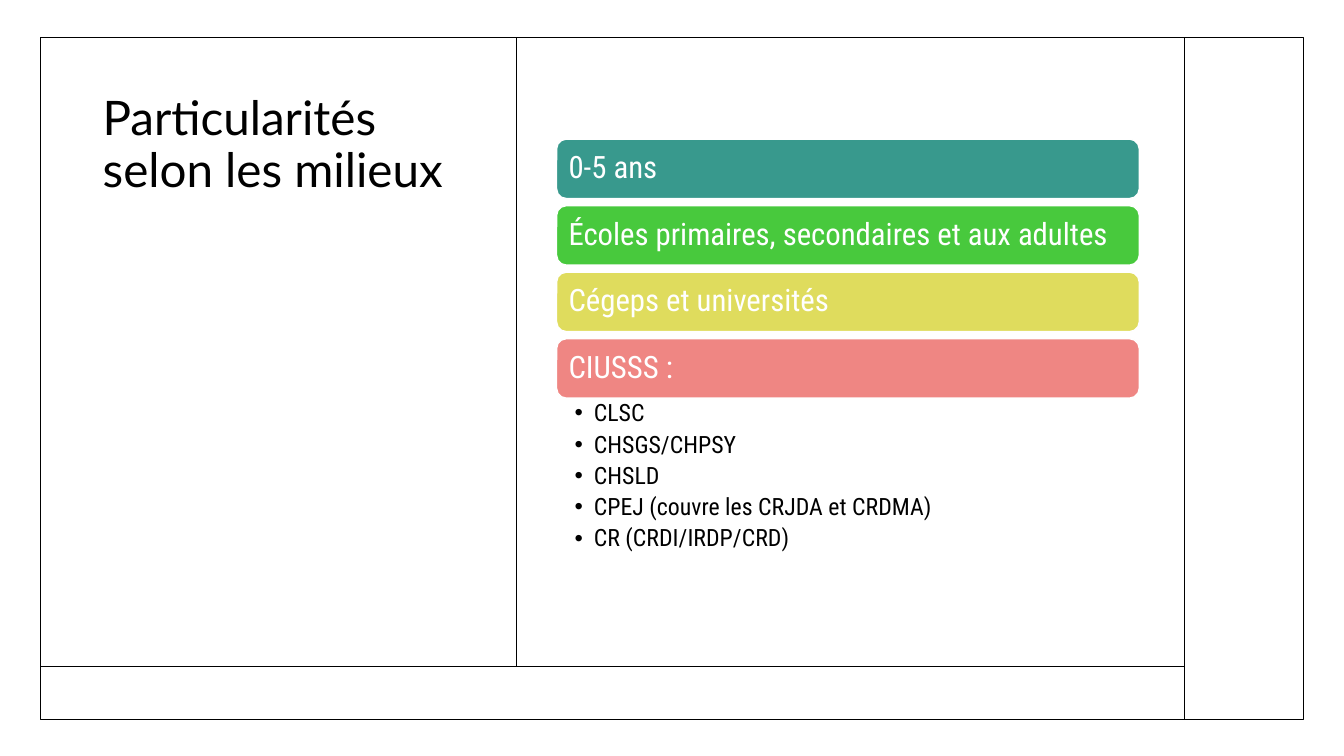
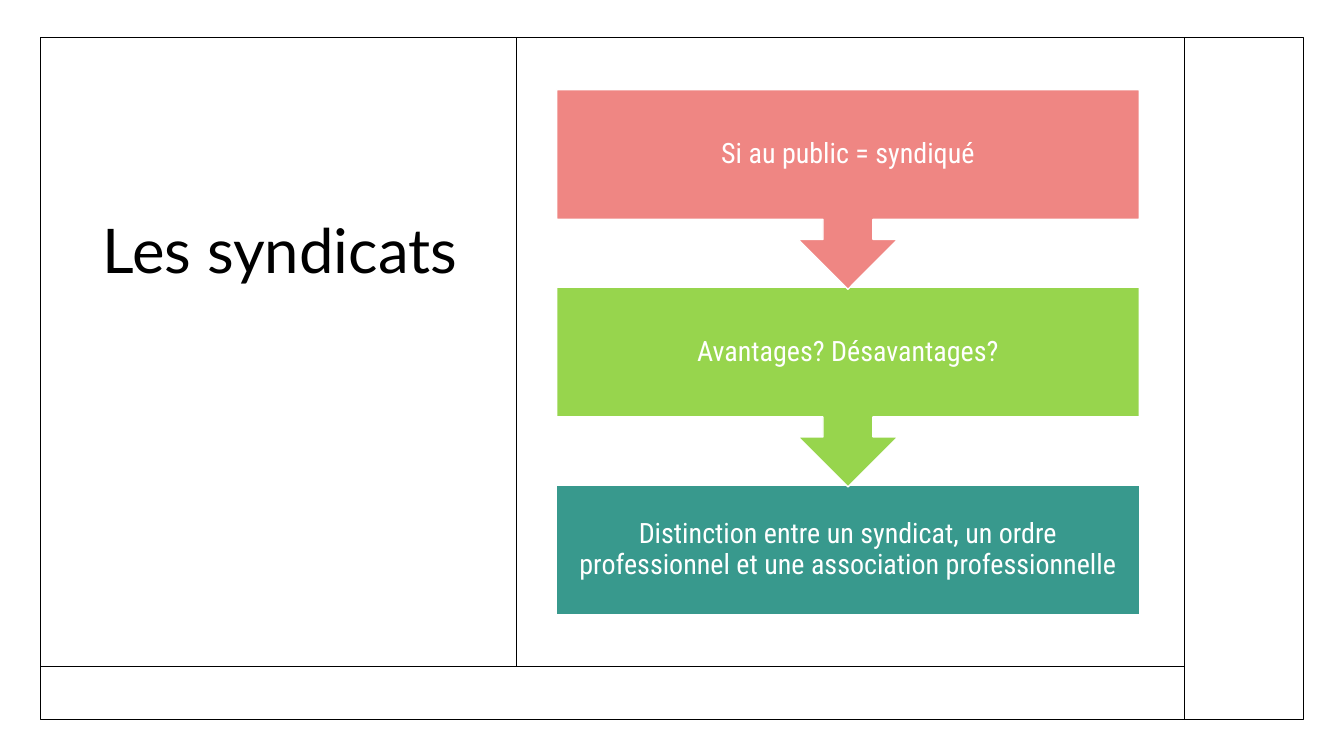
from lxml import etree
from pptx import Presentation
from pptx.dml.color import RGBColor
from pptx.enum.shapes import MSO_CONNECTOR, MSO_SHAPE
from pptx.enum.text import MSO_ANCHOR, PP_ALIGN
from pptx.oxml.ns import qn
from pptx.util import Pt

PX = 9144  # EMU per px, 100 px to the inch
RECT, ROUND = MSO_SHAPE.RECTANGLE, MSO_SHAPE.ROUNDED_RECTANGLE
CALLOUT = MSO_SHAPE.DOWN_ARROW_CALLOUT
TOP, MIDDLE, BOTTOM = MSO_ANCHOR.TOP, MSO_ANCHOR.MIDDLE, MSO_ANCHOR.BOTTOM
LEFT, CENTER = PP_ALIGN.LEFT, PP_ALIGN.CENTER

COLORS = {
    "black": "000000", "white": "FFFFFF", "teal": "38998D", "green": "48C93D",
    "yellow": "DFDC5D", "coral": "EF8683", "lime": "97D54D",
}
RGB = {name: RGBColor.from_string(value) for name, value in COLORS.items()}
FONTS = {"title": "Lato", "body": "Roboto Condensed"}

# Frame and dividers shared by both slides
FRAME = (40, 37, 1253, 677)
DIVIDERS = [(41, 661, 1175, 661), (512, 37, 512, 661), (1175, 37, 1175, 713)]
TITLE_X, TITLE_Y, TITLE_W = 92, 89, 375
BODY_X, BODY_W = 552, 578


def add_box(s, kind, box, fill=None, line="white"):
    sp = s.shapes.add_shape(kind, *[v * PX for v in box])
    sp.shadow.inherit = False
    if fill:
        sp.fill.solid()
        sp.fill.fore_color.rgb = RGB[fill]
    else:
        sp.fill.background()
    sp.line.color.rgb = RGB[line]
    sp.line.width = Pt(1)
    return sp


def write(sp, lines, size, color, font="body", anchor=MIDDLE, align=LEFT,
          insets=(10, 5, 10, 5), after=0):
    """Fill a shape with one paragraph per line; insets run left, top, right, bottom."""
    tf = sp.text_frame
    frame = {"word_wrap": True, "vertical_anchor": anchor}
    for side, inset in zip(("left", "top", "right", "bottom"), insets):
        frame["margin_" + side] = inset * PX
    for name, value in frame.items():
        setattr(tf, name, value)
    for i, line in enumerate(lines):
        p = tf.add_paragraph() if i else tf.paragraphs[0]
        for name, value in {"alignment": align, "line_spacing": 0.9,
                            "space_after": Pt(after)}.items():
            setattr(p, name, value)
        r = p.add_run()
        r.text = line
        r.font.name, r.font.size = FONTS[font], Pt(size)
        r.font.color.rgb = RGB[color]


prs = Presentation()
prs.slide_width, prs.slide_height = 1333 * PX, 750 * PX

# Shared layout and titles
slides = []
for title, size, height, anchor in [
    ("Particularités selon les milieux", 34, 521, TOP),
    ("Les syndicats", 44, 200, BOTTOM),
]:
    s = prs.slides.add_slide(prs.slide_layouts[6])
    add_box(s, RECT, FRAME, line="black")
    for ends in DIVIDERS:
        line = s.shapes.add_connector(MSO_CONNECTOR.STRAIGHT, *[v * PX for v in ends])
        line.line.color.rgb = RGB["black"]
        line.line.width = Pt(1)
        etree.SubElement(line._element.spPr, qn("a:effectLst"))
    tb = s.shapes.add_textbox(*[v * PX for v in (TITLE_X, TITLE_Y, TITLE_W, height)])
    write(tb, [title], size, "black", font="title", anchor=anchor)
    slides.append(s)
settings, unions = slides

# Slide 1: work settings
BAR_Y, BAR_H, BAR_STEP = 138, 59, 66
bars = [
    ("0-5 ans", "teal"),
    ("Écoles primaires, secondaires et aux adultes", "green"),
    ("Cégeps et universités", "yellow"),
    ("CIUSSS :", "coral"),
]
for i, (text, fill) in enumerate(bars):
    bar = add_box(settings, ROUND, (BODY_X, BAR_Y + i * BAR_STEP, BODY_W, BAR_H), fill)
    write(bar, [text], 22, "white", insets=(9, 9, 9, 9))

list_y = BAR_Y + (len(bars) - 1) * BAR_STEP + BAR_H
tb = settings.shapes.add_textbox(*[v * PX for v in (BODY_X, list_y, BODY_W, 164)])
write(tb, ["CLSC", "CHSGS/CHPSY", "CHSLD", "CPEJ (couvre les CRJDA et CRDMA)",
           "CR (CRDI/IRDP/CRD)"],
      17, "black", anchor=TOP, insets=(18, 3, 17, 3), after=4)
for p in tb.text_frame.paragraphs:
    pPr = p._p.get_or_add_pPr()
    pPr.set("marL", str(19 * PX))
    pPr.set("indent", str(-19 * PX))
    etree.SubElement(pPr, qn("a:buFont"), typeface="Arial")
    etree.SubElement(pPr, qn("a:buChar"), char="•")

# Slide 2: steps, drawn from the bottom up so each arrow tip lies over the next box
STEP_Y, STEP_GAP = 89, 196
steps = [
    ("Si au public = syndiqué", "coral", CALLOUT, 198),
    ("Avantages? Désavantages?", "lime", CALLOUT, 198),
    ("Distinction entre un syndicat, un ordre professionnel "
     "et une association professionnelle", "teal", RECT, 129),
]
for i, (text, fill, kind, height) in reversed(list(enumerate(steps))):
    step = add_box(unions, kind, (BODY_X, STEP_Y + i * STEP_GAP, BODY_W, height), fill)
    write(step, [text], 20, "white", align=CENTER, insets=(16, 16, 16, 16))

prs.save("out.pptx")
